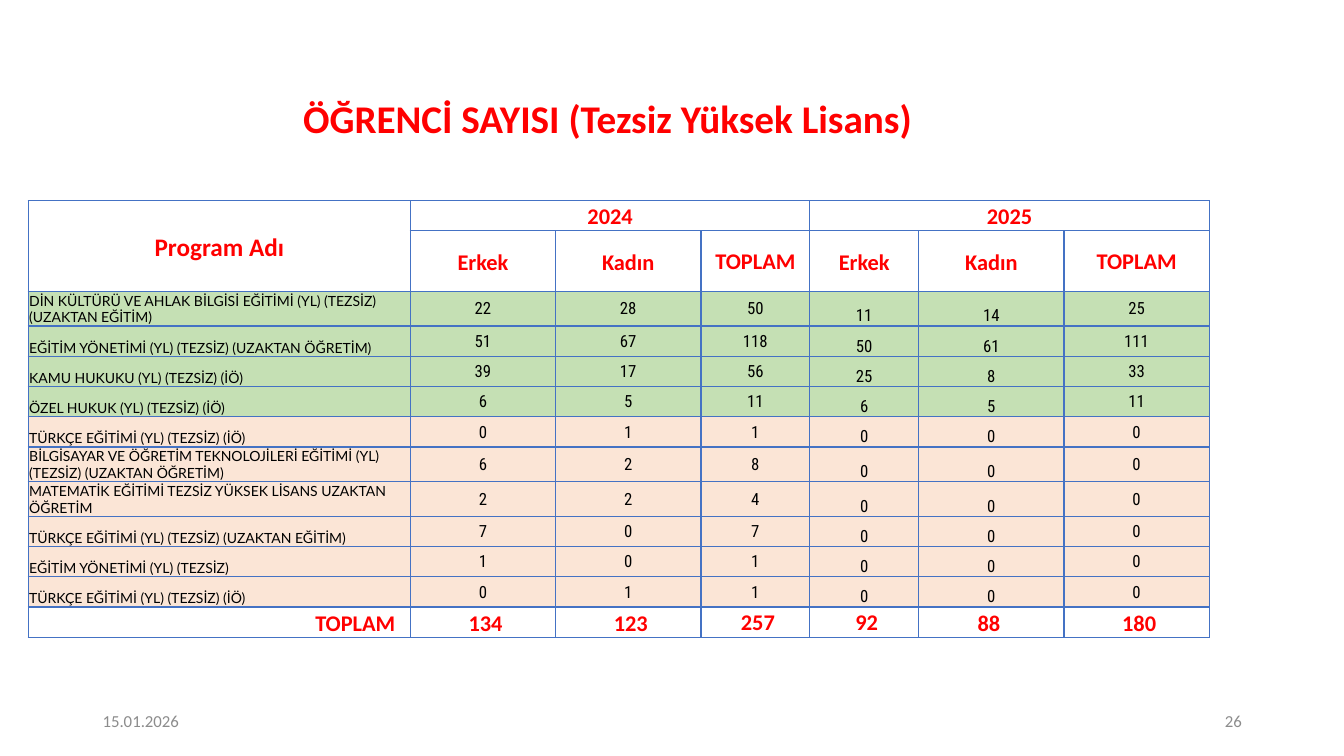
from lxml import etree
from pptx import Presentation
from pptx.dml.color import RGBColor
from pptx.enum.text import MSO_ANCHOR, PP_ALIGN
from pptx.oxml.ns import qn
from pptx.util import Pt

LEFT, CENTER, RIGHT = PP_ALIGN.LEFT, PP_ALIGN.CENTER, PP_ALIGN.RIGHT
MIDDLE, BOTTOM = MSO_ANCHOR.MIDDLE, MSO_ANCHOR.BOTTOM
RED = RGBColor(0xFF, 0x00, 0x00)
BLACK = RGBColor(0x00, 0x00, 0x00)
GRAY = RGBColor(0x8C, 0x8C, 0x8C)
BLUE = RGBColor(0x44, 0x72, 0xC4)
GREEN = RGBColor(0xC5, 0xE0, 0xB4)
PEACH = RGBColor(0xFB, 0xE5, 0xD6)

# Program, then men and women in 2024, men and women in 2025
PROGRAMS = [
    ("DİN KÜLTÜRÜ VE AHLAK BİLGİSİ EĞİTİMİ (YL) (TEZSİZ) (UZAKTAN EĞİTİM)", 22, 28, 11, 14),
    ("EĞİTİM YÖNETİMİ (YL) (TEZSİZ) (UZAKTAN ÖĞRETİM)", 51, 67, 50, 61),
    ("KAMU HUKUKU (YL) (TEZSİZ) (İÖ)", 39, 17, 25, 8),
    ("ÖZEL HUKUK (YL) (TEZSİZ) (İÖ)", 6, 5, 6, 5),
    ("TÜRKÇE EĞİTİMİ (YL) (TEZSİZ) (İÖ)", 0, 1, 0, 0),
    ("BİLGİSAYAR VE ÖĞRETİM TEKNOLOJİLERİ EĞİTİMİ (YL) (TEZSİZ) (UZAKTAN ÖĞRETİM)", 6, 2, 0, 0),
    ("MATEMATİK EĞİTİMİ TEZSİZ YÜKSEK LİSANS UZAKTAN ÖĞRETİM", 2, 2, 0, 0),
    ("TÜRKÇE EĞİTİMİ (YL) (TEZSİZ) (UZAKTAN EĞİTİM)", 7, 0, 0, 0),
    ("EĞİTİM YÖNETİMİ (YL) (TEZSİZ)", 1, 0, 0, 0),
    ("TÜRKÇE EĞİTİMİ (YL) (TEZSİZ) (İÖ)", 0, 1, 0, 0),
]
GREEN_ROWS = 4
COL_WIDTHS = [272.9, 103.8, 103.8, 77.8, 77.8, 103.8, 103.8]
ROW_HEIGHT = 21.6


def write(p, text, font, size, color, align, bold=False):
    p.text = text
    p.alignment = align
    p.font.name = font
    p.font.size = Pt(size)
    p.font.color.rgb = color
    p.font.bold = bold


def format_cell(cell, fill, anchor, side, top=0.7):
    """Set fill, anchor, margins and the four blue borders of a table cell."""
    if fill is None:
        cell.fill.background()
    else:
        cell.fill.solid()
        cell.fill.fore_color.rgb = fill
    cell.vertical_anchor = anchor
    cell.margin_left = cell.margin_right = Pt(side)
    cell.margin_top, cell.margin_bottom = Pt(top), 0
    tc_pr = cell._tc.get_or_add_tcPr()
    for i, edge in enumerate(("a:lnL", "a:lnR", "a:lnT", "a:lnB")):
        ln = etree.Element(qn(edge), w=str(Pt(1)))
        solid = etree.SubElement(ln, qn("a:solidFill"))
        etree.SubElement(solid, qn("a:srgbClr"), val=str(BLUE))
        tc_pr.insert(i, ln)


prs = Presentation()
prs.slide_width, prs.slide_height = Pt(960), Pt(540)
s = prs.slides.add_slide(prs.slide_layouts[5])

title = s.shapes.title
title.left, title.top, title.width, title.height = Pt(20.2), Pt(61.9), Pt(827.3), Pt(49)
title.text_frame.vertical_anchor = MIDDLE
p = title.text_frame.paragraphs[0]
write(p, "ÖĞRENCİ SAYISI (Tezsiz Yüksek Lisans)", "Calibri", 28, RED, CENTER, True)
p.line_spacing = 0.9

for x, text, align in ((66.2, "15.01.2026", LEFT), (678.2, "26", RIGHT)):
    tf = s.shapes.add_textbox(Pt(x), Pt(500.4), Pt(216), Pt(28.8)).text_frame
    tf.word_wrap = True
    tf.vertical_anchor = MIDDLE
    write(tf.paragraphs[0], text, "Calibri", 12, GRAY, align)

# Each year gets a column with the sum of men and women
body = [(name, m24, w24, m24 + w24, m25, w25, m25 + w25)
        for name, m24, w24, m25, w25 in PROGRAMS]
totals = [sum(column) for column in list(zip(*body))[1:]]
header = [
    ["Program Adı", "2024", "", "", "2025", "", ""],
    [""] + ["Erkek", "Kadın", "TOPLAM"] * 2,
]
rows = header + body + [["TOPLAM"] + totals]
last = len(rows) - 1

frame = s.shapes.add_table(len(rows), len(COL_WIDTHS), Pt(20.2), Pt(143.3),
                           Pt(sum(COL_WIDTHS)), Pt(ROW_HEIGHT * (len(rows) + 1)))
table = frame.table
table.first_row = table.horz_banding = False
for column, width in zip(table.columns, COL_WIDTHS):
    column.width = Pt(width)
for i, row in enumerate(table.rows):
    row.height = Pt(ROW_HEIGHT * (2 if i == 1 else 1))

for r, values in enumerate(rows):
    for c, value in enumerate(values):
        cell = table.cell(r, c)
        p = cell.text_frame.paragraphs[0]
        if len(header) <= r < last:
            fill = GREEN if r < len(header) + GREEN_ROWS else PEACH
            format_cell(cell, fill, BOTTOM if c in (0, 4, 5) else MIDDLE, 0.7)
            if c == 0:
                write(p, value, "Lato", 10, BLACK, LEFT)
            else:
                write(p, str(value), "Roboto Condensed", 12, BLACK, CENTER)
        else:
            tight = c == 3 or (r, c) in ((0, 4), (1, 6), (last, 4))
            format_cell(cell, None, MIDDLE, 0 if tight else 3.6, 0 if tight else 0.7)
            write(p, str(value), "Calibri", 18 if (r, c) == (0, 0) else 16, RED, CENTER, True)
            p.line_spacing = 1.07

# The total row sits slightly off centre
for c in range(1, 7):
    cell = table.cell(last, c)
    if c == 5:
        cell.margin_right += Pt(3.6)
    else:
        cell.margin_left += Pt(3.6)
total_label = table.cell(last, 0)
total_label.margin_right = Pt(10.8)
total_label.text_frame.paragraphs[0].alignment = RIGHT

table.cell(0, 0).merge(table.cell(1, 0))
table.cell(0, 1).merge(table.cell(0, 3))
table.cell(0, 4).merge(table.cell(0, 6))

prs.save("out.pptx")
